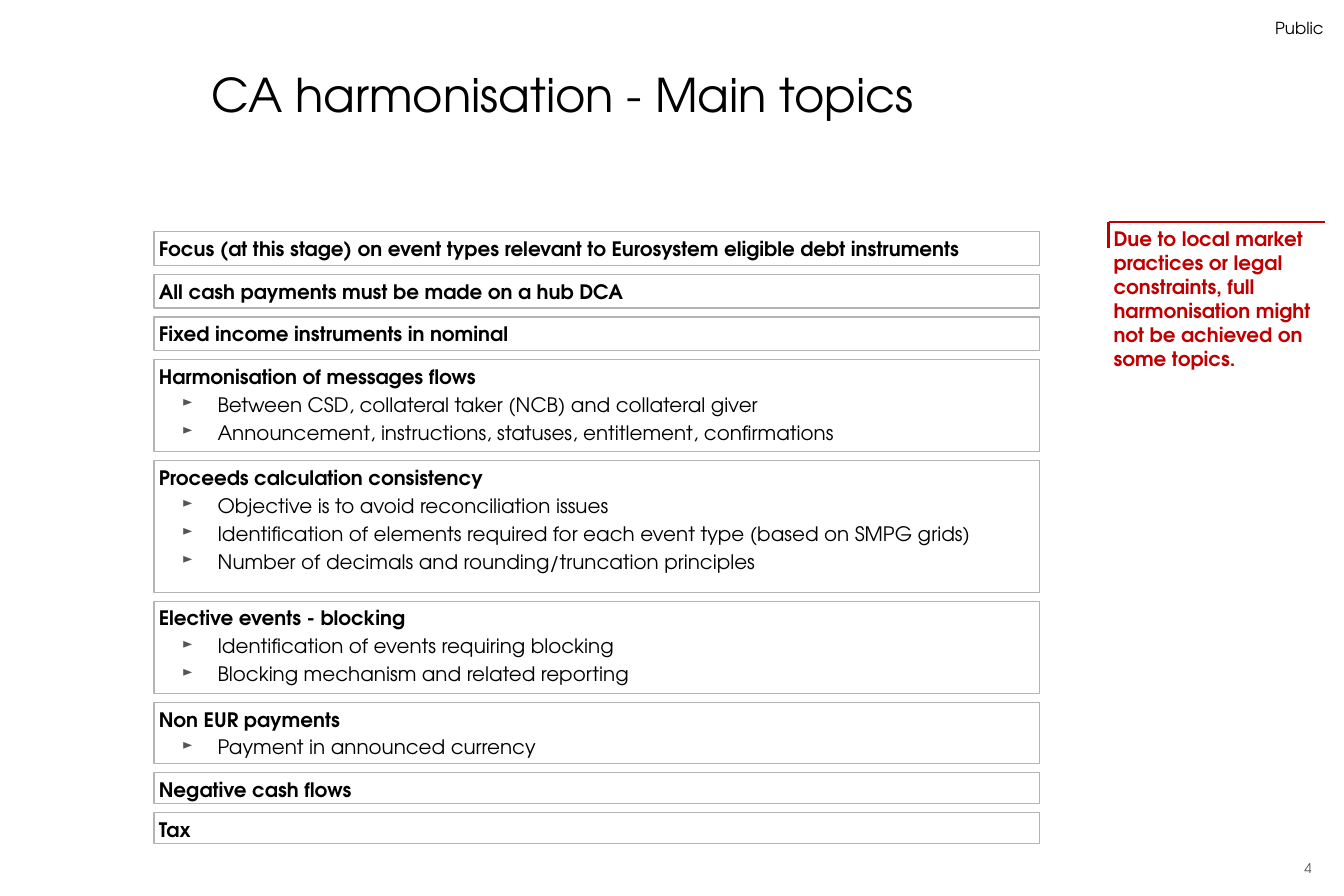
import pptx
import pptx.dml.color
import pptx.enum.shapes
import pptx.enum.text
import pptx.oxml
import pptx.oxml.ns
import pptx.util

Pt = pptx.util.Pt
RGBColor = pptx.dml.color.RGBColor
Align = pptx.enum.text.PP_ALIGN
Anchor = pptx.enum.text.MSO_ANCHOR
NS = pptx.oxml.ns.nsdecls("a")

BLACK = RGBColor(0x00, 0x00, 0x00)
WHITE = RGBColor(0xFF, 0xFF, 0xFF)
GREY = RGBColor(0x55, 0x55, 0x55)
BORDER = RGBColor(0xB4, 0xB4, 0xB4)
RED = RGBColor(0xC0, 0x00, 0x00)

FONT = "TeX Gyre Adventor"
INSET = 2.9
BOX_LEFT, BOX_TOP, BOX_WIDTH, BOX_GAP = 92.8, 139.7, 533.5, 5.5
NOTE_LEFT, NOTE_TOP, NOTE_RIGHT = 668.2, 133.9, 798.5

TOPICS = [
    (20.2, "Focus (at this stage) on event types relevant to Eurosystem eligible debt instruments", []),
    (20.2, "All cash payments must be made on a hub DCA", []),
    (20.2, "Fixed income instruments in nominal", []),
    (55.4, "Harmonisation of messages flows", [
        "Between CSD, collateral taker (NCB) and collateral giver",
        "Announcement, instructions, statuses, entitlement, confirmations",
    ]),
    (79.2, "Proceeds calculation consistency", [
        "Objective is to avoid reconciliation issues",
        "Identification of elements required for each event type (based on SMPG grids)",
        "Number of decimals and rounding/truncation principles",
    ]),
    (55.4, "Elective events - blocking", [
        "Identification of events requiring blocking",
        "Blocking mechanism and related reporting",
    ]),
    (36.7, "Non EUR payments", ["Payment in announced currency"]),
    (18.7, "Negative cash flows", []),
    (18.7, "Tax", []),
]


def set_frame(tf, inset_x=0, inset_y=0, anchor=Anchor.TOP, wrap=True):
    """Set the insets, anchor and wrapping of a text frame."""
    tf.margin_left = tf.margin_right = Pt(inset_x)
    tf.margin_top = tf.margin_bottom = Pt(inset_y)
    tf.vertical_anchor = anchor
    tf.word_wrap = wrap


def add_bullet(p):
    """Give a paragraph the small grey arrow bullet and its indent."""
    p.level = 1
    pPr = p._p.get_or_add_pPr()
    pPr.set("marL", str(Pt(35.4)))
    pPr.set("indent", str(Pt(-21.3)))
    for xml in (
        f'<a:buClr {NS}><a:srgbClr val="{GREY}"/></a:buClr>',
        f'<a:buSzPct {NS} val="70000"/>',
        f'<a:buChar {NS} char="►"/>',
    ):
        pPr.append(pptx.oxml.parse_xml(xml))


def write(p, text, size=12, color=BLACK, bold=False, align=Align.LEFT, bullet=False, before=0, spacing=None):
    """Write formatted text into a paragraph."""
    if bullet:
        add_bullet(p)
    p.alignment = align
    p.space_before = Pt(before)
    if spacing:
        p.line_spacing = spacing
    r = p.add_run()
    r.text = text
    r.font.name = FONT
    r.font.size = Pt(size)
    r.font.bold = bold
    r.font.color.rgb = color


def add_text(s, text, left, top, width, height, frame=None, **fmt):
    """Add a text box with one paragraph."""
    sp = s.shapes.add_textbox(Pt(left), Pt(top), Pt(width), Pt(height))
    set_frame(sp.text_frame, **(frame or {}))
    write(sp.text_frame.paragraphs[0], text, **fmt)


def add_topic(s, top, height, heading, points):
    """Add a bordered box with a bold heading and its bullet points."""
    sp = s.shapes.add_shape(
        pptx.enum.shapes.MSO_SHAPE.RECTANGLE, Pt(BOX_LEFT), Pt(top), Pt(BOX_WIDTH), Pt(height)
    )
    sp.shadow.inherit = False
    sp.fill.solid()
    sp.fill.fore_color.rgb = WHITE
    sp.line.color.rgb = BORDER
    sp.line.width = Pt(0.75)
    tf = sp.text_frame
    set_frame(tf, INSET, INSET)
    write(tf.paragraphs[0], heading, bold=True)
    for point in points:
        write(tf.add_paragraph(), point, bullet=True, before=2.4)


def add_line(s, x1, y1, x2, y2):
    """Add a red rule."""
    line = s.shapes.add_connector(
        pptx.enum.shapes.MSO_CONNECTOR.STRAIGHT, Pt(x1), Pt(y1), Pt(x2), Pt(y2)
    )
    line.line.color.rgb = RED
    line.line.width = Pt(1.5)
    line._element.spPr.append(pptx.oxml.parse_xml(f"<a:effectLst {NS}/>"))


def main():
    """Build the slide and save it."""
    prs = pptx.Presentation()
    prs.slide_width, prs.slide_height = Pt(810), Pt(540)
    s = prs.slides.add_slide(prs.slide_layouts[6])

    add_text(s, "Public", 768.2, 9.4, 29.5, 12.2, frame={"wrap": False},
             size=10, align=Align.RIGHT, spacing=1.1)
    add_text(s, "CA harmonisation - Main topics", 127.4, 39.6, 573.8, 56.9, size=28)
    add_text(s, "4", 767.5, 514.1, 30.2, 17.3,
             frame={"inset_x": 7.2, "inset_y": 3.6, "anchor": Anchor.BOTTOM},
             size=8, color=GREY, align=Align.RIGHT)

    top = BOX_TOP
    for height, heading, points in TOPICS:
        add_topic(s, top, height, heading, points)
        top += height + BOX_GAP

    add_text(s, "Due to local market practices or legal constraints, full harmonisation "
             "might not be achieved on some topics.",
             NOTE_LEFT, NOTE_TOP, NOTE_RIGHT - NOTE_LEFT, 96.5,
             frame={"inset_x": INSET, "inset_y": INSET}, color=RED, bold=True)
    add_line(s, NOTE_LEFT, NOTE_TOP, NOTE_RIGHT, NOTE_TOP)
    add_line(s, NOTE_LEFT, NOTE_TOP + 15.8, NOTE_LEFT, NOTE_TOP)

    prs.save("out.pptx")


if __name__ == "__main__":
    main()
